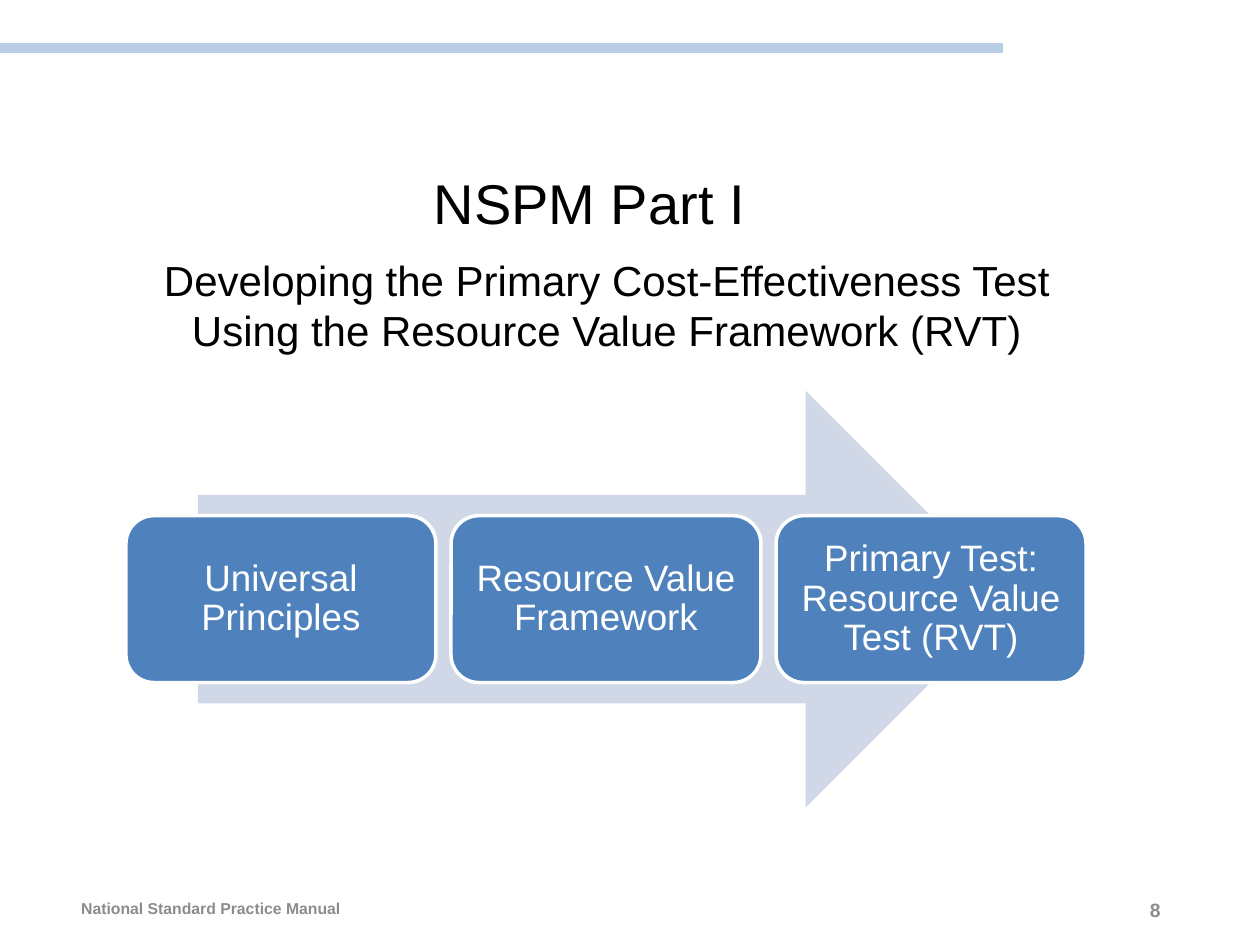
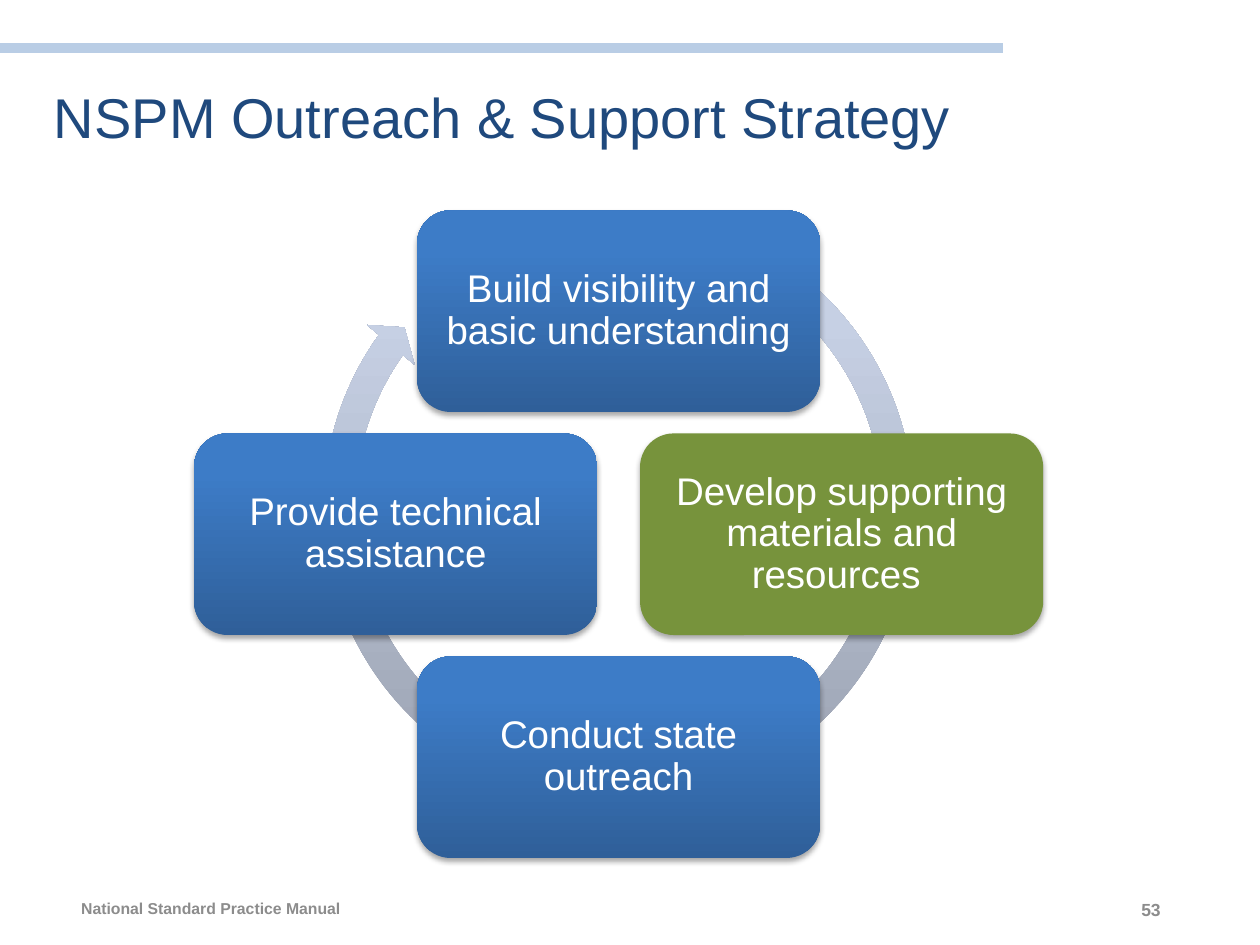
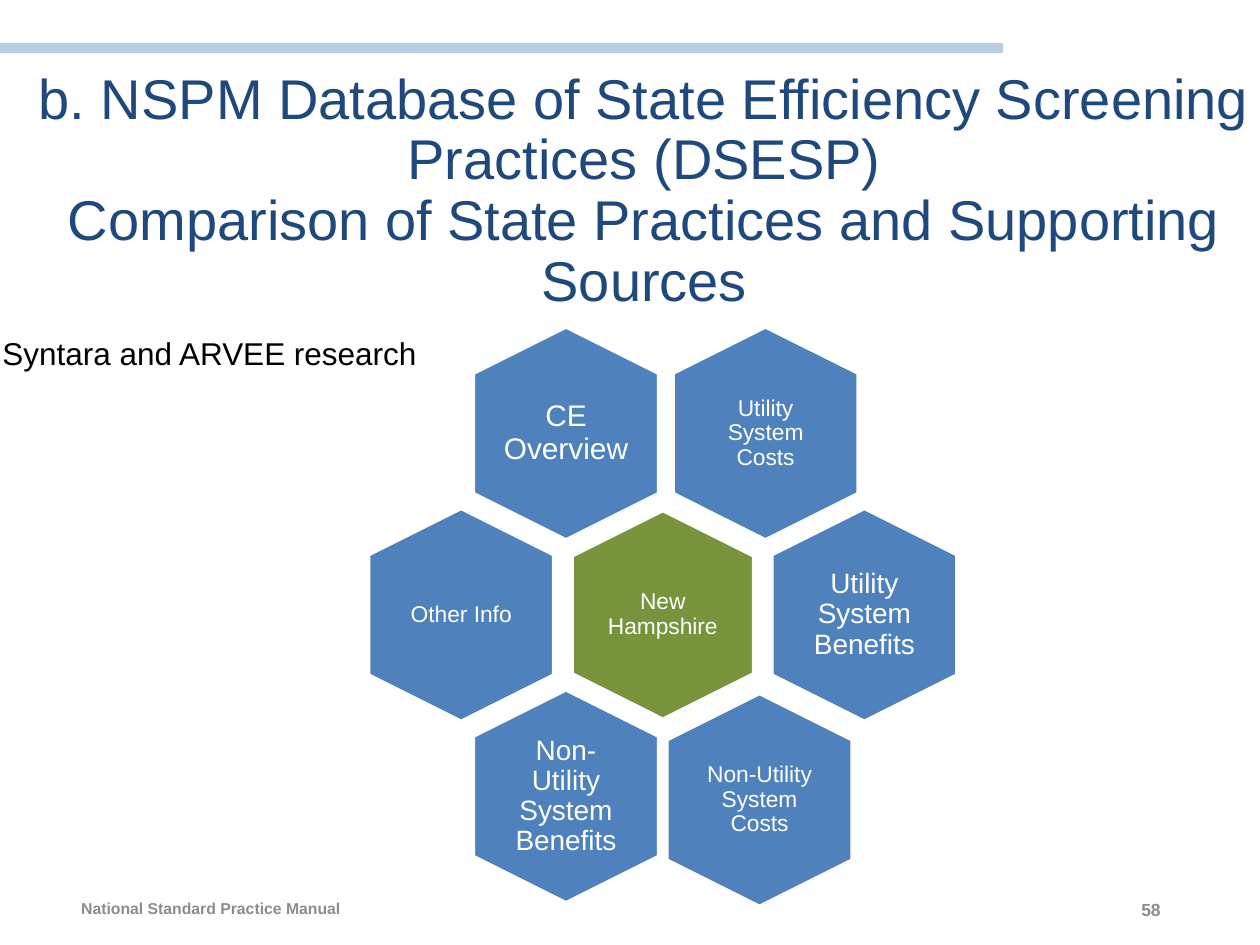
from math import cos, pi, sin
from typing import NamedTuple

from lxml import etree
from pptx import Presentation
from pptx.dml.color import RGBColor
from pptx.enum.shapes import MSO_CONNECTOR, MSO_SHAPE
from pptx.enum.text import MSO_ANCHOR, PP_ALIGN
from pptx.oxml.ns import qn
from pptx.util import Inches, Pt

FONT = "Arial"
WHITE = RGBColor(0xFF, 0xFF, 0xFF)
BLACK = RGBColor(0, 0, 0)
NAVY = RGBColor(0x1F, 0x49, 0x7D)
GRAY = RGBColor(0x8C, 0x8C, 0x8C)
BAND = RGBColor(0xB9, 0xCD, 0xE5)
BLUE = RGBColor(0x4F, 0x81, 0xBD)
GREEN = RGBColor(0x77, 0x93, 0x3C)
PALE = RGBColor(0xD0, 0xD8, 0xE8)
CARD_BLUES = [RGBColor(0x2F, 0x5F, 0x99), RGBColor(0x3D, 0x7C, 0xC7)]
RING_BLUES = [RGBColor(0x99, 0xA0, 0xAF), RGBColor(0xC6, 0xD0, 0xE4)]

LEFT, CENTER, RIGHT = PP_ALIGN.LEFT, PP_ALIGN.CENTER, PP_ALIGN.RIGHT
TOP, MIDDLE = MSO_ANCHOR.TOP, MSO_ANCHOR.MIDDLE
STRAIGHT = MSO_CONNECTOR.STRAIGHT
ROUND_RECT = MSO_SHAPE.ROUNDED_RECTANGLE
RIGHT_ARROW = MSO_SHAPE.RIGHT_ARROW
RING_ARROW = MSO_SHAPE.CIRCULAR_ARROW
HEXAGON = MSO_SHAPE.HEXAGON

COLS, ROWS = 10, 7.5
RING_ADJUSTMENTS = (0.05, 2.73, 129.27, 179.66, 0.05)


class Box(NamedTuple):
    x: float
    y: float
    w: float
    h: float

    def emu(self):
        return [Inches(v) for v in self]

    def share(self, x, y, w, h):
        return Box(self.x + x * self.w, self.y + y * self.h, w * self.w, h * self.h)

    def center(self):
        return self.x + self.w / 2, self.y + self.h / 2


def centered(cx, cy, w, h):
    return Box(cx - w / 2, cy - h / 2, w, h)


def write(shape, text, size, color, align=CENTER, anchor=MIDDLE, spacing=0.9,
          bold=False, inset=None):
    tf = shape.text_frame
    tf.word_wrap = True
    tf.vertical_anchor = anchor
    if inset is not None:
        tf.margin_left = tf.margin_right = Inches(inset)
        tf.margin_top = tf.margin_bottom = Inches(inset)
    p = tf.paragraphs[0]
    p.text = text
    p.alignment = align
    p.line_spacing = spacing
    p.font.name, p.font.size, p.font.bold = FONT, Pt(size), bold
    p.font.color.rgb = color


def add_text(s, box, text, size, color, **style):
    write(s.shapes.add_textbox(*box.emu()), text, size, color, **style)


def add_figure(s, kind, box, fill, outlined=False):
    sp = s.shapes.add_shape(kind, *box.emu())
    sp.shadow.inherit = False
    if isinstance(fill, list):
        sp.fill.gradient()
        sp.fill.gradient_angle = 90
        for stop, color, position in zip(sp.fill.gradient_stops, fill, (0, 0.8)):
            stop.color.rgb, stop.position = color, position
    else:
        sp.fill.solid()
        sp.fill.fore_color.rgb = fill
    if outlined:
        sp.line.color.rgb, sp.line.width = WHITE, Pt(2)
    else:
        sp.line.fill.background()
    return sp


def drop_shadow(sp):
    effects = sp._element.spPr.find(qn("a:effectLst"))
    shadow = etree.SubElement(effects, qn("a:outerShdw"), blurRad=str(Pt(3.1)),
                              dist=str(Pt(1.8)), dir="5400000", rotWithShape="0")
    color = etree.SubElement(shadow, qn("a:srgbClr"), val="000000")
    etree.SubElement(color, qn("a:alpha"), val="35000")


def new_slide(prs, number, number_size=10):
    s = prs.slides.add_slide(prs.slide_layouts[6])
    band = s.shapes.add_connector(STRAIGHT, 0, Inches(0.38), Inches(7.96), Inches(0.38))
    band.line.color.rgb, band.line.width = BAND, Pt(6)
    etree.SubElement(band._element.spPr, qn("a:effectLst"))
    add_text(s, Box(0, 7.01, 3.38, 0.4), "National Standard Practice Manual ", 9, GRAY,
             bold=True, spacing=1)
    add_text(s, Box(7.06, 7.03, 2.25, 0.38), number, number_size, GRAY,
             align=RIGHT, bold=True, spacing=1)
    return s


def add_title(s, box, text, color=NAVY, align=CENTER):
    add_text(s, box, text, 32, color, align=align)


def add_process(s, box, steps, gap=0.12):
    add_figure(s, RIGHT_ARROW, box.share(0.075, 0, 0.85, 1), PALE)
    pitch = (box.w + gap) / len(steps)
    row = box.share(0, 0.3, 1, 0.4)
    for i, step in enumerate(steps):
        card = Box(row.x + i * pitch, row.y, pitch - gap, row.h)
        sp = add_figure(s, ROUND_RECT, card, BLUE, outlined=True)
        write(sp, step, 21, WHITE, inset=0.09)


def add_cycle(s, box, steps, card_w=3.2, card_h=1.6, ring=4.93):
    cx, cy = box.center()
    sp = add_figure(s, RING_ARROW, Box(cx - ring / 2, box.y - 0.11, ring, ring), RING_BLUES)
    for i, value in enumerate(RING_ADJUSTMENTS):
        sp.adjustments[i] = value
    rx, ry = (box.w - card_w) / 2, (box.h - card_h) / 2
    for i, (step, fill) in enumerate(steps):
        angle = 2 * pi * i / len(steps)
        card = centered(cx + rx * sin(angle), cy - ry * cos(angle), card_w, card_h)
        sp = add_figure(s, ROUND_RECT, card, fill)
        drop_shadow(sp)
        write(sp, step, 22, WHITE, inset=0.09)


def add_honeycomb(s, box, cells, pitch_x=1.6, pitch_y=1.44):
    cx, cy = box.center()
    for text, col, row, size, fill, scale in cells:
        x, y = cx + col * pitch_x, cy + row * pitch_y
        sp = add_figure(s, HEXAGON, centered(x, y, 1.69 * scale, 1.47 * scale), fill,
                        outlined=True)
        sp.rotation = 90
        add_text(s, centered(x, y, 1.01 * scale, 1.16 * scale), text, size, WHITE,
                 inset=0.05 if size == 13 else 0)


def part_one_slide(prs):
    s = new_slide(prs, "8", 11)
    add_process(s, Box(1, 3.1, 7.62, 3.31),
                ["Universal Principles", "Resource Value Framework",
                 "Primary Test:\vResource Value Test (RVT)"])
    add_text(s, Box(0.91, 1.97, 7.81, 1.12),
             "Developing the Primary Cost-Effectiveness Test Using the Resource Value "
             "Framework (RVT)", 24, BLACK, anchor=TOP, spacing=1)
    add_title(s, Box(0.99, 1.19, 7.5, 0.9), "NSPM Part I ", BLACK)


def outreach_slide(prs):
    s = new_slide(prs, "53")
    add_title(s, Box(0.33, 0.52, 8.62, 0.87), "NSPM Outreach & Support Strategy", align=LEFT)
    add_cycle(s, Box(1.54, 1.67, 6.74, 5.14), [
        ("Build visibility and basic understanding", CARD_BLUES),
        ("Develop supporting materials and resources ", GREEN),
        ("Conduct state outreach", CARD_BLUES),
        ("Provide technical assistance", CARD_BLUES),
    ])


def database_slide(prs):
    s = new_slide(prs, "58")
    add_honeycomb(s, Box(2.93, 2.6, 4.66, 4.56), [
        ("Utility System Costs", 0.51, -1, 13, BLUE, 1),
        ("CE Overview ", -0.48, -1, 17, BLUE, 1),
        ("New Hampshire", 0, 0, 13, GREEN, 0.98),
        ("Utility System Benefits", 1, 0, 16, BLUE, 1),
        ("Other Info", -1, 0, 13, BLUE, 1),
        ("Non-Utility System Benefits", -0.48, 1, 16, BLUE, 1),
        ("Non-Utility System Costs", 0.48, 1.02, 13, BLUE, 1),
    ])
    add_title(s, Box(0.05, 1.01, 10.13, 1.03),
              "b. NSPM Database of State Efficiency Screening Practices (DSESP)\v"
              "Comparison of State Practices and Supporting Sources")
    add_text(s, Box(-0.08, 2.6, 3.89, 0.4), "Syntara and ARVEE research", 18, BLACK,
             align=LEFT, anchor=TOP, spacing=1)


def main():
    prs = Presentation()
    prs.slide_width, prs.slide_height = Inches(COLS), Inches(ROWS)
    part_one_slide(prs)
    outreach_slide(prs)
    database_slide(prs)
    prs.save("out.pptx")


if __name__ == "__main__":
    main()
